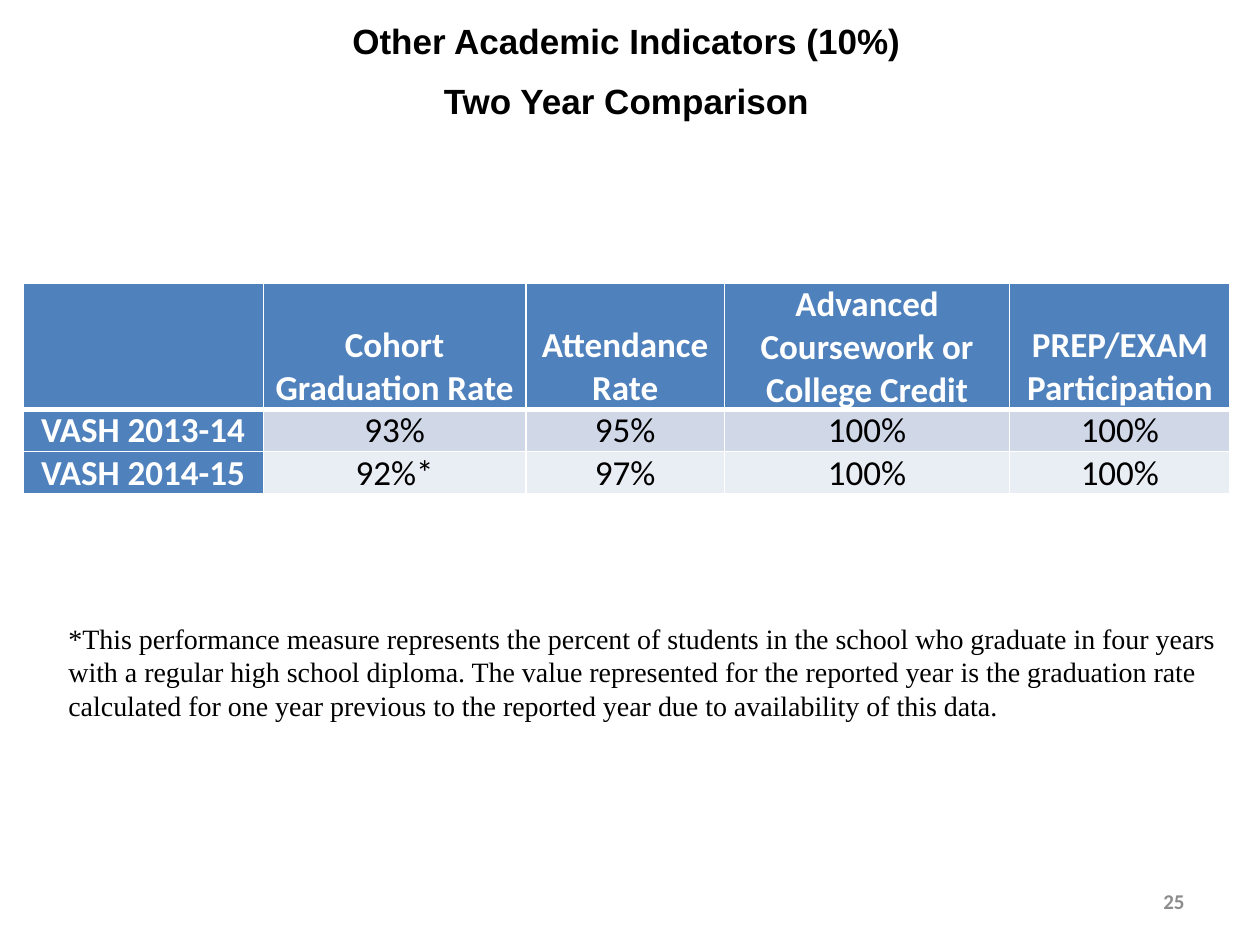
from lxml import etree
from pptx import Presentation
from pptx.dml.color import RGBColor
from pptx.enum import text
from pptx.oxml.ns import qn
from pptx.util import Pt

THEME = {
    "title": ("Arial", 20, True, "000000"),
    "header": ("Calibri", 20, True, "FFFFFF"),
    "value": ("Calibri", 20, False, "000000"),
    "note": ("Times New Roman", 16, False, "000000"),
    "number": ("Calibri", 12, True, "8C8C8C"),
    "head_fill": "4F81BD",
    "bands": ("D0D8E8", "E9EDF4"),
    "border": "FFFFFF",
}
TITLE = ["Other Academic Indicators (10%)", "Two Year Comparison"]
ROWS = [
    ["", "Cohort Graduation Rate", "Attendance Rate",
     "Advanced Coursework or College Credit", "PREP/EXAM Participation"],
    ["VASH 2013-14", "93%", "95%", "100%", "100%"],
    ["VASH 2014-15", "92%*", "97%", "100%", "100%"],
]
COLUMN_WIDTHS = [137.5, 150, 113.5, 163, 126]
ROW_HEIGHTS = [71.5, 24, 24]
NOTE = [
    "*This performance measure represents the percent of students in the school "
    "who graduate in four years with a regular high school diploma. The value "
    "represented for the reported year is the graduation rate calculated for one "
    "year previous to the reported year due to availability of this data."
]
NUMBER = ["25"]
LEFT, CENTER, RIGHT = (text.PP_ALIGN.LEFT, text.PP_ALIGN.CENTER, text.PP_ALIGN.RIGHT)


def write(tf, lines, style, align, gap=0):
    """Fill a text frame with one styled paragraph per line."""
    name, size, bold, color = THEME[style]
    for i, line in enumerate(lines):
        p = tf.add_paragraph() if i else tf.paragraphs[0]
        p.text, p.alignment = line, align
        p.space_before = Pt(gap if i else 0)
        p.font.name, p.font.size, p.font.bold = name, Pt(size), bold
        p.font.color.rgb = RGBColor.from_string(color)


def add_text(s, box, lines, style, align, anchor=text.MSO_ANCHOR.TOP, gap=0):
    """Add a wrapped text box."""
    tf = s.shapes.add_textbox(*map(Pt, box)).text_frame
    tf.word_wrap, tf.vertical_anchor = True, anchor
    write(tf, lines, style, align, gap)


def set_borders(cell, bottom):
    """Draw solid borders on all four sides of a cell."""
    tc_pr = cell._tc.get_or_add_tcPr()
    for i, (side, width) in enumerate(zip("LRTB", (1, 1, 1, bottom))):
        ln = etree.Element(qn(f"a:ln{side}"), w=str(Pt(width)))
        fill = etree.SubElement(ln, qn("a:solidFill"))
        etree.SubElement(fill, qn("a:srgbClr"), val=THEME["border"])
        tc_pr.insert(i, ln)


def add_rates(s, left, top):
    """Add the table of yearly rates."""
    table = s.shapes.add_table(
        len(ROWS), len(COLUMN_WIDTHS), Pt(left), Pt(top),
        Pt(sum(COLUMN_WIDTHS)), Pt(sum(ROW_HEIGHTS))).table
    table.first_col = True
    for column, width in zip(table.columns, COLUMN_WIDTHS):
        column.width = Pt(width)
    for r, (row, height) in enumerate(zip(ROWS, ROW_HEIGHTS)):
        table.rows[r].height = Pt(height)
        for c, value in enumerate(row):
            cell = table.cell(r, c)
            heading = r == 0 or c == 0
            fill = THEME["head_fill"] if heading else THEME["bands"][r - 1]
            cell.margin_left = cell.margin_right = Pt(5)
            cell.margin_top = cell.margin_bottom = 0
            cell.vertical_anchor = text.MSO_ANCHOR.BOTTOM
            cell.fill.solid()
            cell.fill.fore_color.rgb = RGBColor.from_string(fill)
            write(cell.text_frame, [value], "header" if heading else "value", CENTER)
            set_borders(cell, 1 if r else 3)


def main():
    """Build the slide and save it."""
    prs = Presentation()
    prs.slide_width, prs.slide_height = Pt(720), Pt(540)
    s = prs.slides.add_slide(prs.slide_layouts[6])
    add_text(s, (516, 500.5, 168, 29), NUMBER, "number", RIGHT, text.MSO_ANCHOR.MIDDLE)
    add_text(s, (-2, 7.5, 720, 126), TITLE, "title", CENTER, gap=10.5)
    add_rates(s, 13, 162)
    add_text(s, (32, 351.5, 671, 65.5), NOTE, "note", LEFT)
    prs.save("out.pptx")


if __name__ == "__main__":
    main()
